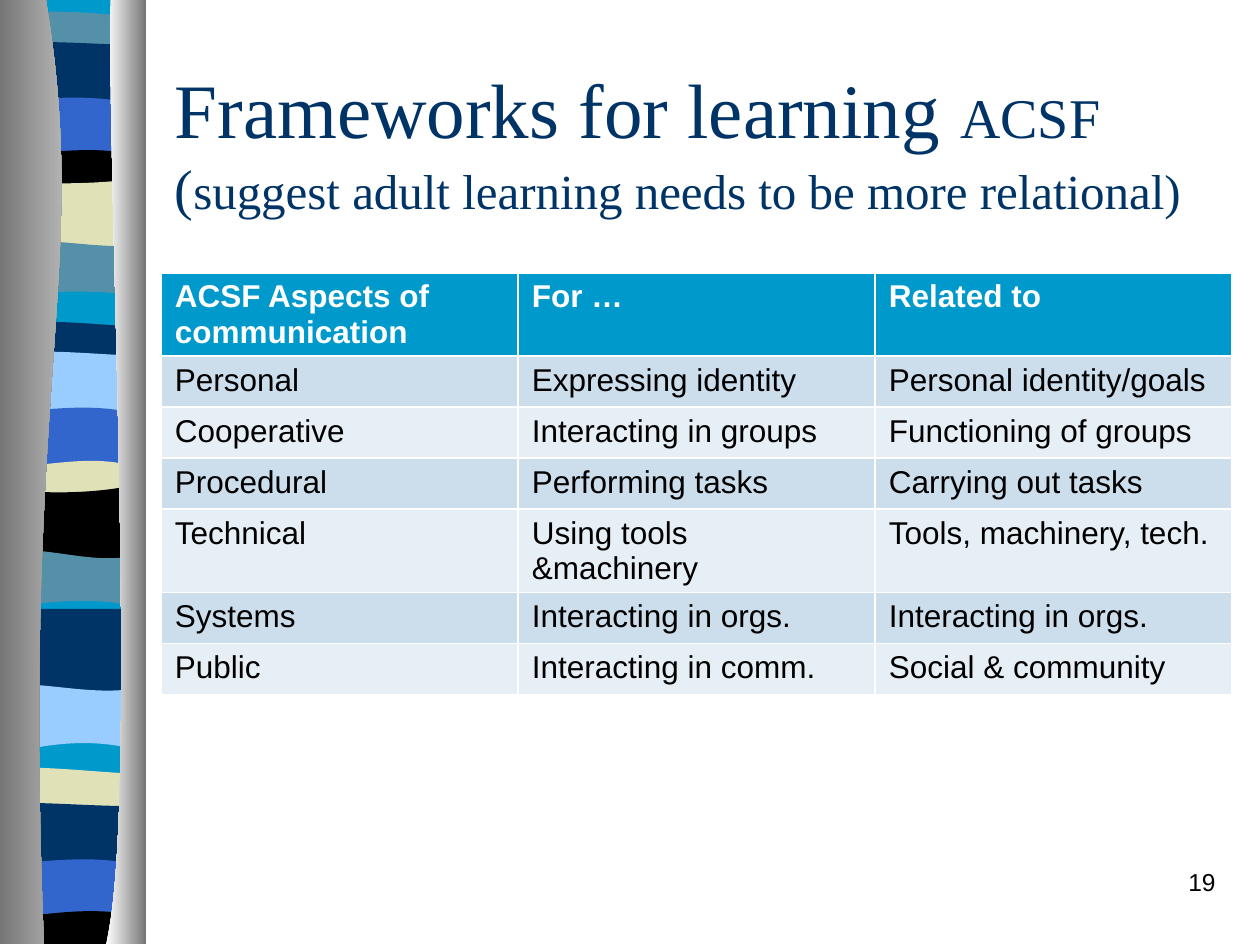
import lxml.etree
import pptx
import pptx.dml.color
import pptx.enum.text
import pptx.oxml.ns
import pptx.util

RGBColor = pptx.dml.color.RGBColor
WHITE = RGBColor(0xFF, 0xFF, 0xFF)
BLACK = RGBColor(0x00, 0x00, 0x00)
CYAN = RGBColor(0x00, 0x99, 0xCC)
TEAL = RGBColor(0x54, 0x90, 0xA8)
CREAM = RGBColor(0xE1, 0xE1, 0xB7)
BLUE = RGBColor(0x33, 0x66, 0xCC)
NAVY = RGBColor(0x00, 0x33, 0x66)
SKY = RGBColor(0x99, 0xCC, 0xFF)
GREY = RGBColor(0x76, 0x76, 0x76)
SILVER = RGBColor(0xD0, 0xD0, 0xD0)
ROW_DARK = RGBColor(0xCC, 0xDE, 0xEC)
ROW_LIGHT = RGBColor(0xE7, 0xEF, 0xF6)

PX = 914400 // 126
BAND_LEFT, BAND_RIGHT = 8, 144
SLIDE_BOTTOM = 944

deck = pptx.Presentation()
deck.slide_width, deck.slide_height = pptx.util.Inches(10), pptx.util.Inches(7.5)
slide = deck.slides.add_slide(deck.slide_layouts[5])


def outline(points, curve_starts, *colours):
    builder = slide.shapes.build_freeform(*points[0], scale=PX)
    builder.add_line_segments(points[1:], close=True)
    piece = builder.convert_to_shape()
    sides = list(piece._element.iter(pptx.oxml.ns.qn("a:lnTo")))
    for start in curve_starts:
        bend = lxml.etree.Element(pptx.oxml.ns.qn("a:cubicBezTo"))
        sides[start].addprevious(bend)
        for side in sides[start:start + 3]:
            bend.append(side[0])
            side.getparent().remove(side)
    piece.shadow.inherit = False
    piece.line.fill.background()
    if len(colours) == 1:
        piece.fill.solid()
        piece.fill.fore_color.rgb = colours[0]
    else:
        piece.fill.gradient()
        piece.fill.gradient_angle = 0
        for stop, colour in zip(piece.fill.gradient_stops, colours):
            stop.color.rgb = colour


def wave(heights):
    third = (BAND_RIGHT - BAND_LEFT) / 3
    return [(round(BAND_LEFT + i * third), y) for i, y in enumerate(heights)]


outline([(BAND_LEFT, 0), (BAND_RIGHT, 0),
         (BAND_RIGHT, SLIDE_BOTTOM), (BAND_LEFT, SLIDE_BOTTOM)], [], CYAN)

bands = [
    (TEAL, 14, 9, 13, 18),
    (NAVY, 43, 40, 45, 45),
    (BLUE, 102, 97, 94, 106),
    (BLACK, 154, 154, 143, 158),
    (CREAM, 181, 185, 184, 178),
    (TEAL, 242, 237, 250, 245),
    (CYAN, 296, 291, 289, 297),
    (NAVY, 323, 319, 325, 327),
    (SKY, 353, 349, 355, 356),
    (BLUE, 413, 409, 402, 416),
    (CREAM, 467, 466, 452, 470),
    (BLACK, 490, 494, 494, 483),
    (TEAL, 551, 546, 568, 553),
    (CYAN, 608, 601, 596, 609),
    (NAVY, 609, 609, 609, 609),
    (SKY, 684, 683, 697, 687),
    (CYAN, 754, 742, 738, 752),
    (CREAM, 768, 766, 773, 774),
    (NAVY, 803, 802, 807, 806),
    (BLUE, 864, 861, 854, 867),
    (BLACK, 918, 914, 905, 918),
]
floor = (CYAN,) + (SLIDE_BOTTOM,) * 4
for (colour, *heights), (below, *lower) in zip(bands, bands[1:] + [floor]):
    if colour == CYAN:
        continue
    if below == CYAN:
        outline(wave(heights) + wave(lower)[::-1], [0, 4], colour)
    else:
        base = lower[0] + 10
        outline(wave(heights) + [(BAND_RIGHT, base), (BAND_LEFT, base)], [0], colour)

outline([(46, 0), (91, 272), (21, 373), (44, SLIDE_BOTTOM),
         (0, SLIDE_BOTTOM), (0, 0)], [0], GREY, SILVER)
outline([(111, 0), (106, 158), (140, 814), (106, SLIDE_BOTTOM),
         (146, SLIDE_BOTTOM), (146, 0)], [0], WHITE, GREY)

heading = slide.shapes.title
heading_place = {"left": 162, "top": 62, "width": 1071, "height": 158}
for name, length in heading_place.items():
    setattr(heading, name, length * PX)
heading_format = {
    "word_wrap": True,
    "auto_size": pptx.enum.text.MSO_AUTO_SIZE.NONE,
    "vertical_anchor": pptx.enum.text.MSO_ANCHOR.MIDDLE,
}
for name, value in heading_format.items():
    setattr(heading.text_frame, name, value)
heading_line = heading.text_frame.paragraphs[0]
heading_line.alignment = pptx.enum.text.PP_ALIGN.LEFT
for words, size in [("Frameworks for learning ", 44), ("ACSF (", 32),
                    ("suggest adult learning needs to be more relational)", 28)]:
    part = heading_line.add_run()
    part.text = words
    part.font.color.rgb = NAVY
    for name, value in {"name": "Times New Roman", "size": pptx.util.Pt(size)}.items():
        setattr(part.font, name, value)

aspects = [
    ("ACSF Aspects of communication", "For …", "Related to"),
    ("Personal", "Expressing identity", "Personal identity/goals"),
    ("Cooperative", "Interacting in groups", "Functioning of groups"),
    ("Procedural", "Performing tasks", "Carrying out tasks"),
    ("Technical", "Using tools &machinery", "Tools, machinery, tech."),
    ("Systems", "Interacting in orgs.", "Interacting in orgs."),
    ("Public", "Interacting in comm.", "Social & community"),
]
framework = slide.shapes.add_table(len(aspects), 3, 161 * PX, 273 * PX,
                                   1071 * PX, 51 * len(aspects) * PX).table
for column in framework.columns:
    column.width = 357 * PX
for r, aspect in enumerate(aspects):
    framework.rows[r].height = 51 * PX
    header = r == 0
    fill = CYAN if header else (ROW_DARK if r % 2 else ROW_LIGHT)
    cell_format = {"name": "Arial", "size": pptx.util.Pt(18), "bold": header}
    for c, words in enumerate(aspect):
        cell = framework.cell(r, c)
        cell.text = words
        for name in ("margin_left", "margin_right"):
            setattr(cell, name, 14 * PX)
        font = cell.text_frame.paragraphs[0].runs[0].font
        font.color.rgb = WHITE if header else BLACK
        for name, value in cell_format.items():
            setattr(font, name, value)
        cell.fill.solid()
        cell.fill.fore_color.rgb = fill

page = slide.shapes.add_textbox(966 * PX, 861 * PX, 262 * PX, 63 * PX).text_frame
page.word_wrap = True
page_line = page.paragraphs[0]
page_line.alignment = pptx.enum.text.PP_ALIGN.RIGHT
page_number = page_line.add_run()
page_number.text = "19"
page_number.font.color.rgb = BLACK
for name, value in {"name": "Arial", "size": pptx.util.Pt(14)}.items():
    setattr(page_number.font, name, value)

deck.save("out.pptx")
